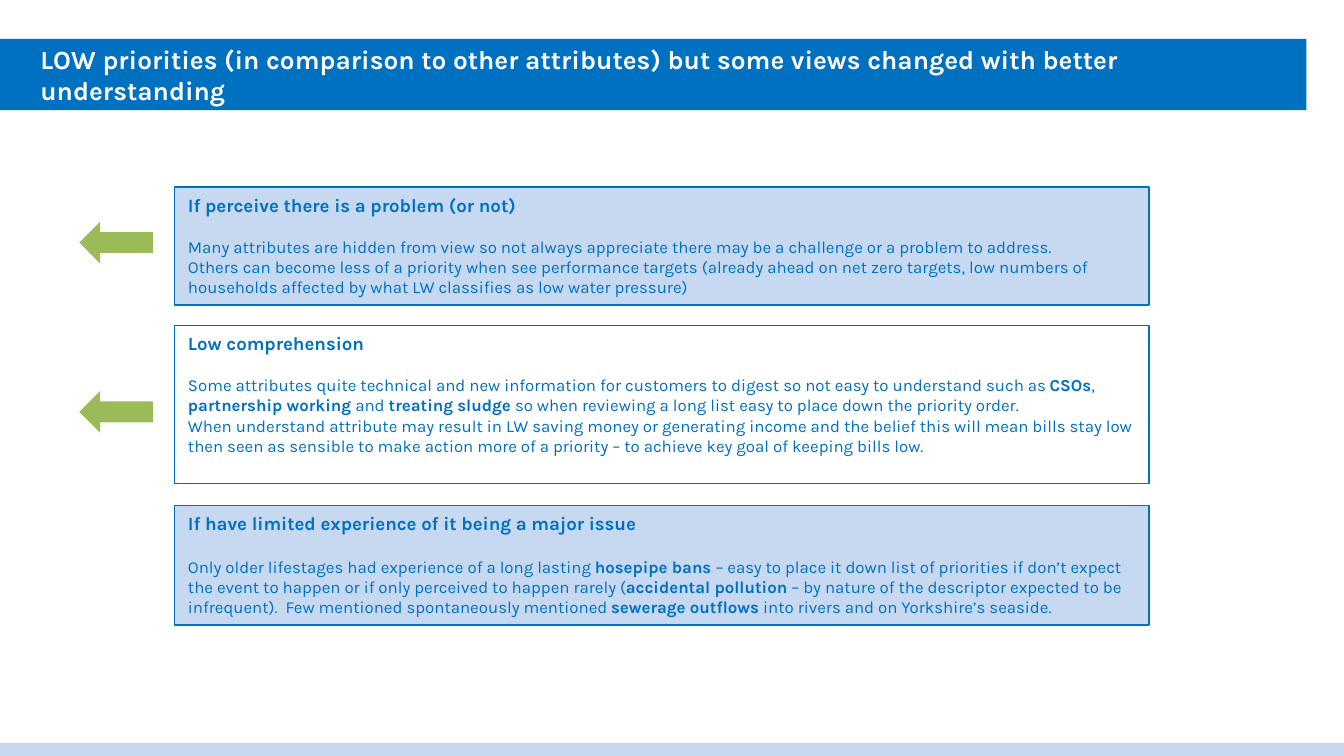
from dataclasses import dataclass

from pptx import Presentation
from pptx import util as u
from pptx.dml.color import RGBColor
from pptx.enum import shapes, text


@dataclass(frozen=True)
class Theme:
    font: str = "Karla"
    blue: RGBColor = RGBColor(0x00, 0x70, 0xC0)
    pale: RGBColor = RGBColor(0xC6, 0xD9, 0xF1)
    white: RGBColor = RGBColor(0xFF, 0xFF, 0xFF)
    green: RGBColor = RGBColor(0x9B, 0xBB, 0x59)
    title: float = 14
    heading: float = 10
    body: float = 9


THEME = Theme()
SHAPE = shapes.MSO_SHAPE
SLIDE_WIDTH = 10
SLIDE_HEIGHT = SLIDE_WIDTH * 9 / 16

# Each reason: top, height, fill, gap below heading (pt), heading, paragraphs.
# The pieces of a paragraph alternate between regular and bold.
REASONS = [
    (1.39, 0.88, THEME.pale, 11, "If perceive there is a problem (or not)", [
        ["Many attributes are hidden from view so not always appreciate there "
         "may be a challenge or a problem to address."],
        ["Others can become less of a priority when see performance targets "
         "(already ahead on net zero targets, low numbers of households "
         "affected by what LW classifies as low water pressure)"],
    ]),
    (2.42, 1.18, THEME.white, 11, "Low comprehension", [
        ["Some attributes quite technical and new information for customers "
         "to digest so not easy to understand such as ", "CSOs", ", ",
         "partnership working ", "and ", "treating sludge ",
         "so when reviewing a long list easy to place down the priority order."],
        ["When understand attribute may result in LW saving money or "
         "generating income and the belief this will mean bills stay low then "
         "seen as sensible to make action more of a priority – to achieve key "
         "goal of keeping bills low."],
    ]),
    (3.76, 0.89, THEME.pale, 12,
     "If have limited experience of it being a major issue", [
         ["Only older lifestages had experience of a long lasting ",
          "hosepipe bans ",
          "– easy to place it down list of priorities if don’t expect the "
          "event to happen or if only perceived to happen rarely (",
          "accidental pollution ",
          "– by nature of the descriptor expected to be infrequent).  Few "
          "mentioned spontaneously mentioned ", "sewerage outflows ",
          "into rivers and on Yorkshire’s seaside."],
     ]),
]
ARROW_TOPS = [1.65, 2.91]


def add_block(slide, kind, left, top, width, height, fill, line=None):
    block = slide.shapes.add_shape(
        kind, *(u.Inches(n) for n in (left, top, width, height)))
    block.shadow.inherit = False
    block.fill.solid()
    block.fill.fore_color.rgb = fill
    if line is None:
        block.line.fill.background()
    else:
        block.line.color.rgb = line
        block.line.width = u.Pt(0.75)
    return block


def add_run(paragraph, words, size, color, bold):
    paragraph.alignment = text.PP_ALIGN.LEFT
    run = paragraph.add_run()
    run.text = words
    run.font.name = THEME.font
    run.font.size = u.Pt(size)
    run.font.bold = bold
    run.font.color.rgb = color


def add_title(slide, words):
    banner = add_block(slide, SHAPE.RECTANGLE, 0, 0.29, 9.72, 0.53, THEME.blue)
    frame = banner.text_frame
    frame.word_wrap = True
    frame.vertical_anchor = text.MSO_ANCHOR.MIDDLE
    frame.margin_left = u.Inches(0.3)
    add_run(frame.paragraphs[0], words, THEME.title, THEME.white, True)


def add_reason(slide, top, height, fill, gap, heading, paragraphs):
    panel = add_block(slide, SHAPE.RECTANGLE, 1.3, top, 7.25, height, fill,
                      THEME.blue)
    frame = panel.text_frame
    frame.word_wrap = True
    frame.vertical_anchor = text.MSO_ANCHOR.TOP
    title = frame.paragraphs[0]
    title.space_after = u.Pt(gap)
    add_run(title, heading, THEME.heading, THEME.blue, True)
    for pieces in paragraphs:
        paragraph = frame.add_paragraph()
        for i, words in enumerate(pieces):
            add_run(paragraph, words, THEME.body, THEME.blue, i % 2 == 1)


def main():
    deck = Presentation()
    deck.slide_width = u.Inches(SLIDE_WIDTH)
    deck.slide_height = u.Inches(SLIDE_HEIGHT)
    slide = deck.slides.add_slide(deck.slide_layouts[6])

    # Footer strip and title banner
    add_block(slide, SHAPE.RECTANGLE, 0, 5.53, SLIDE_WIDTH, 0.13, THEME.pale)
    add_title(slide, "LOW priorities (in comparison to other attributes) but "
                     "some views changed with better understanding")

    # Reasons for low priority
    for reason in REASONS:
        add_reason(slide, *reason)

    # Arrows beside the first two reasons
    for top in ARROW_TOPS:
        add_block(slide, SHAPE.LEFT_ARROW, 0.59, top, 0.55, 0.31, THEME.green)

    deck.save("out.pptx")


if __name__ == "__main__":
    main()
